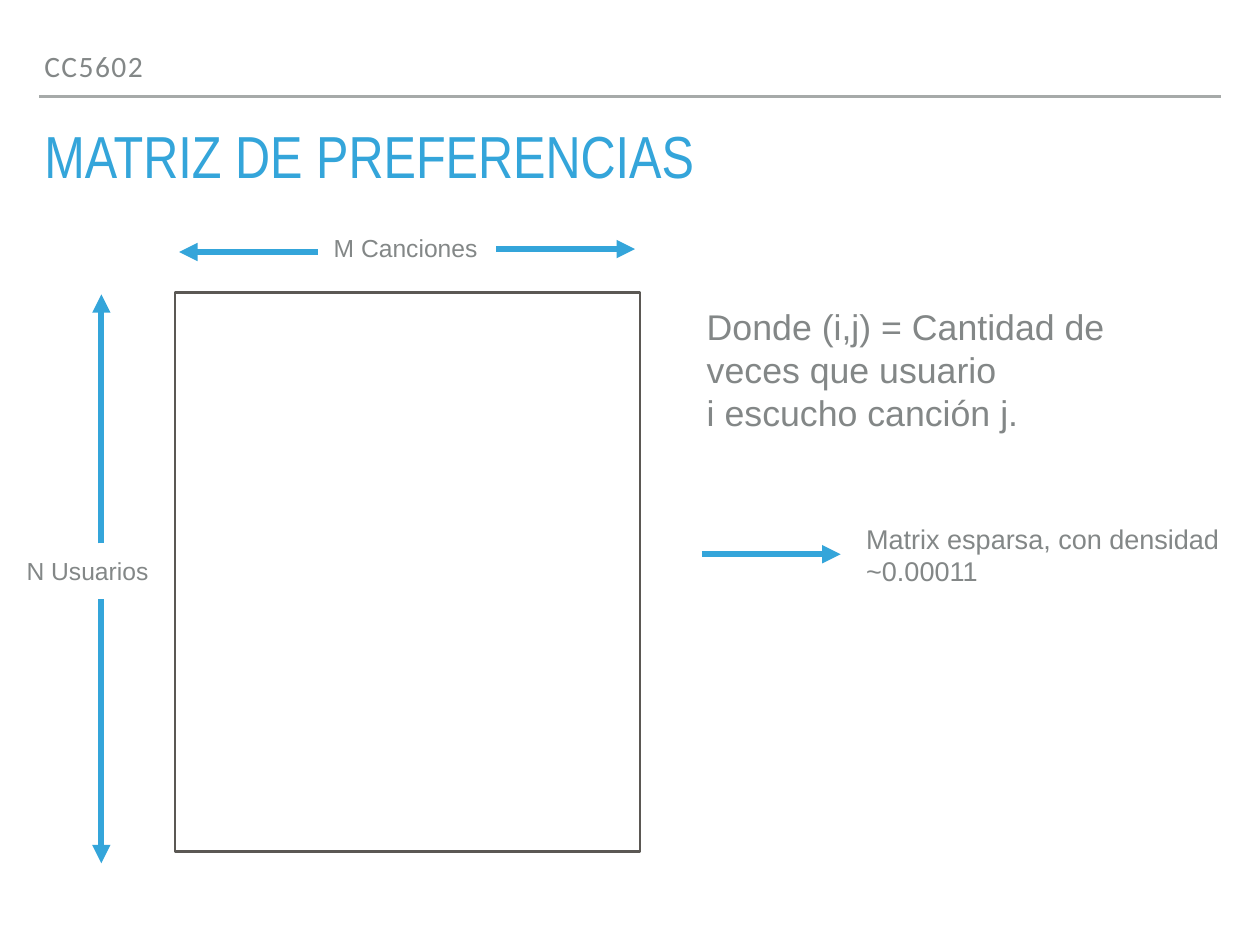
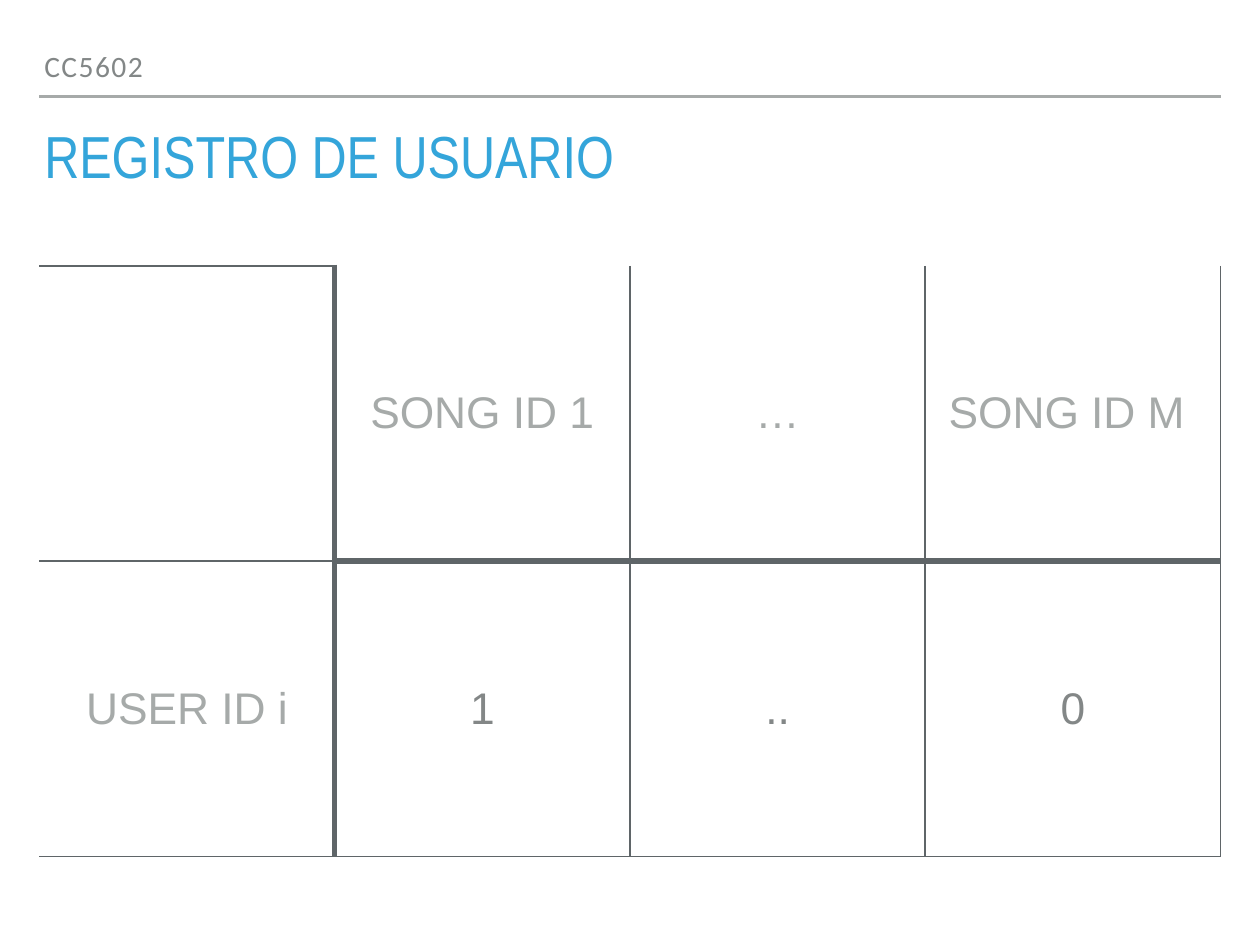
import dataclasses
import pptx
import pptx.dml.color
import pptx.enum.shapes
import pptx.enum.text
import pptx.oxml
import pptx.oxml.ns
import pptx.util
import lxml.etree

PX = 10160


@dataclasses.dataclass(frozen=True)
class Theme:
    blue: str = "34A5DA"
    gray: str = "838787"
    pale: str = "A6AAA9"
    frame: str = "5B5854"
    grid: str = "5F6568"
    body: str = "Arial"
    narrow: str = "Arial Narrow"
    head: str = "Calibri"
    title: float = 48.2
    cell: int = 36
    large: int = 29
    course: int = 24
    note: int = 22
    label: int = 20
    thin: int = 2
    thick: int = 5


theme = Theme()
color = pptx.dml.color.RGBColor.from_string
qn = pptx.oxml.ns.qn
anchor = pptx.enum.text.MSO_ANCHOR
align = pptx.enum.text.PP_ALIGN


def write(frame, text, hold=None, size=theme.label, tint=theme.gray, font=theme.body,
          place=anchor.MIDDLE, side=align.LEFT, wrap=True, before=24, lead=None, track=0):
    hold = hold or frame
    hold.margin_left = hold.margin_right = 5 * PX
    hold.margin_top = hold.margin_bottom = 5 * PX
    hold.vertical_anchor = place
    frame.word_wrap = wrap
    para = frame.paragraphs[0]
    para.text = text
    para.alignment = side
    para.space_before = pptx.util.Pt(before)
    para.line_spacing = lead
    for run in para.runs:
        run.font.size = pptx.util.Pt(size)
        run.font.name = font
        run.font.color.rgb = color(tint)
        if track:
            run.font._element.set("spc", str(track))


def draw(slide, ends, tint, width, arrow=False):
    line = slide.shapes.add_connector(
        pptx.enum.shapes.MSO_CONNECTOR.STRAIGHT, *[n * PX for n in ends])
    line.line.color.rgb = color(tint)
    line.line.width = pptx.util.Pt(width)
    props = line._element.spPr
    if arrow:
        lxml.etree.SubElement(props.find(qn("a:ln")), qn("a:tailEnd"), type="triangle")
    lxml.etree.SubElement(props, qn("a:effectLst"))


deck = pptx.Presentation()
deck.slide_width = 1280 * PX
deck.slide_height = 960 * PX

slides = []
for title in ("MATRIZ DE PREFERENCIAS", "REGISTRO DE USUARIO"):
    slide = deck.slides.add_slide(deck.slide_layouts[6])
    slides.append(slide)
    draw(slide, (40, 98, 1240, 98), theme.pale, theme.thin)
    box = slide.shapes.add_textbox(40 * PX, 45 * PX, 1100 * PX, 45 * PX)
    write(box.text_frame, "CC5602", size=theme.course, font=theme.head,
          place=anchor.BOTTOM, before=0, lead=0.8, track=120)
    box = slide.shapes.add_textbox(40 * PX, 130 * PX, 1200 * PX, 71 * PX)
    write(box.text_frame, title, size=theme.title, tint=theme.blue, font=theme.narrow,
          place=anchor.TOP, before=22, lead=0.8)

matrix, record = slides

square = matrix.shapes.add_shape(
    pptx.enum.shapes.MSO_SHAPE.RECTANGLE, 178 * PX, 297 * PX, 472 * PX, 568 * PX)
square.shadow.inherit = False
square.fill.background()
square.line.color.rgb = color(theme.frame)
square.line.width = pptx.util.Pt(theme.thin)

for ends in (
    (103, 552, 103, 299),
    (103, 609, 103, 877),
    (323, 256, 182, 256),
    (504, 253, 645, 253),
    (713, 563, 854, 563),
):
    draw(matrix, ends, theme.blue, theme.thick, arrow=True)

for text, spot, size, wrap in (
    ("M Canciones", (334, 230, 159, 44), theme.label, False),
    ("N Usuarios", (22, 558, 136, 44), theme.label, False),
    ("Donde (i,j) = Cantidad de veces que usuario\ni escucho canción j.",
     (713, 295, 430, 160), theme.large, True),
    ("Matrix esparsa, con densidad\n~0.00011", (875, 521, 380, 85), theme.note, False),
):
    box = matrix.shapes.add_textbox(*[n * PX for n in spot])
    write(box.text_frame, text, size=size, wrap=wrap)

rows = (
    ("", "SONG ID 1", "…", "SONG ID M "),
    ("USER ID i", "1", "..", "0"),
)
table = record.shapes.add_table(2, 4, 40 * PX, 270 * PX, 1200 * PX, 600 * PX).table
table.first_row = table.horz_banding = False
for r, row in enumerate(rows):
    for c, text in enumerate(row):
        cell = table.cell(r, c)
        first = c == 0
        label = r == 0 or first
        if text:
            write(cell.text_frame, text, hold=cell, size=theme.cell,
                  tint=theme.pale if label else theme.gray, side=align.CENTER)
        rule = theme.thin if first else theme.thick
        edges = {
            "L": 0 if first else theme.thick if c == 1 else theme.thin,
            "R": theme.thick if first else 1 if c == 3 else theme.thin,
            "T": rule if r else theme.thin if first else 0,
            "B": 1 if r else rule,
        }
        props = cell._tc.get_or_add_tcPr()
        for edge, width in edges.items():
            line = lxml.etree.SubElement(
                props, qn("a:ln" + edge), w=str(pptx.util.Pt(width)))
            if width:
                fill = lxml.etree.SubElement(line, qn("a:solidFill"))
                lxml.etree.SubElement(fill, qn("a:srgbClr"), val=theme.grid)
            else:
                lxml.etree.SubElement(line, qn("a:noFill"))
        cell.fill.background()

deck.save("out.pptx")
